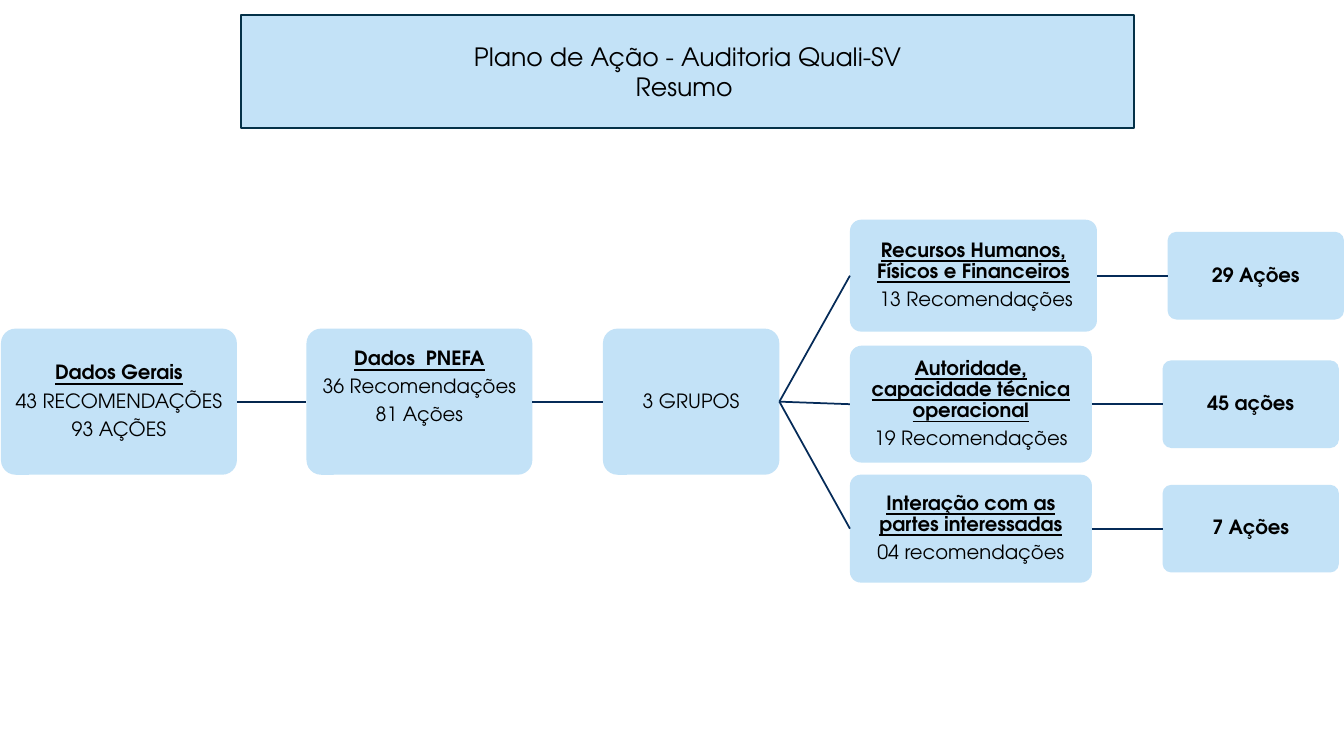
import pptx
import pptx.dml.color
import pptx.enum.shapes
import pptx.enum.text
import pptx.util
import lxml.etree
from pptx.oxml.ns import qn

Inches = pptx.util.Inches
Pt = pptx.util.Pt
RGBColor = pptx.dml.color.RGBColor
ALIGN = pptx.enum.text.PP_ALIGN
ANCHOR = pptx.enum.text.MSO_ANCHOR
SHAPE = pptx.enum.shapes.MSO_SHAPE
CONNECTOR = pptx.enum.shapes.MSO_CONNECTOR

FONT = "TeX Gyre Adventor"
LIGHT_BLUE = RGBColor(0xC3, 0xE2, 0xF7)
TITLE_BORDER = RGBColor(0x04, 0x31, 0x48)
FIRST_LINK = RGBColor(0x04, 0x26, 0x4E)
LINK = RGBColor(0x05, 0x2B, 0x58)
BLACK = RGBColor(0, 0, 0)

presentation = pptx.Presentation()
presentation.slide_width = Inches(13.33)
presentation.slide_height = Inches(7.5)
slide = presentation.slides.add_slide(presentation.slide_layouts[5])


def add_line(paragraph, text, size, bold=False, underline=False):
    paragraph.alignment = ALIGN.CENTER
    run = paragraph.add_run()
    run.text = text
    run.font.name = FONT
    run.font.size = Pt(size)
    run.font.color.rgb = BLACK
    run.font.bold = bold
    run.font.underline = underline


def add_box(left, top, width, height, heading, details):
    box = slide.shapes.add_shape(SHAPE.ROUNDED_RECTANGLE, Inches(left), Inches(top),
                                 Inches(width), Inches(height))
    box.adjustments[0] = 0.1
    box.shadow.inherit = False
    box.fill.solid()
    box.fill.fore_color.rgb = LIGHT_BLUE
    box.line.fill.background()
    frame = box.text_frame
    frame.word_wrap = True
    frame.vertical_anchor = ANCHOR.MIDDLE
    frame.margin_left = frame.margin_right = Inches(0.01)
    frame.margin_top = frame.margin_bottom = Inches(0.01)
    lines = [(heading, True)] if heading else []
    lines += [(detail, False) for detail in details]
    for index, (text, is_heading) in enumerate(lines):
        paragraph = frame.paragraphs[0] if index == 0 else frame.add_paragraph()
        paragraph.line_spacing = 0.9
        paragraph.space_after = Pt(4.9)
        add_line(paragraph, text, 14, is_heading, is_heading and bool(details))
    return box


title = slide.shapes.title
title.left, title.top = Inches(2.39), Inches(0.15)
title.width, title.height = Inches(8.86), Inches(1.12)
title.fill.solid()
title.fill.fore_color.rgb = LIGHT_BLUE
title.line.color.rgb = TITLE_BORDER
title.line.width = Pt(1.25)
title_frame = title.text_frame
title_frame.word_wrap = True
title_frame.auto_size = pptx.enum.text.MSO_AUTO_SIZE.NONE
title_frame.vertical_anchor = ANCHOR.MIDDLE
add_line(title_frame.paragraphs[0], "Plano de Ação - Auditoria Quali-SV", 18)
add_line(title_frame.add_paragraph(), "Resumo ", 18)

general = add_box(0.01, 3.26, 2.34, 1.45, "Dados Gerais", ["43 RECOMENDAÇÕES", "93 AÇÕES"])
program = add_box(3.04, 3.26, 2.24, 1.45, "Dados  PNEFA", ["36 Recomendações", "81 Ações"])
program.text_frame.margin_bottom = Inches(0.29)
groups = add_box(5.98, 3.26, 1.75, 1.45, None, ["3 GRUPOS"])
links = [(general, program, FIRST_LINK), (program, groups, LINK)]

branches = [
    (2.18, 2.45, 1.11, "Recursos Humanos, Físicos e Financeiros", " 13 Recomendações", "29 Ações"),
    (3.43, 2.4, 1.16, "Autoridade, capacidade técnica operacional", "19 Recomendações", "45 ações"),
    (4.71, 2.4, 1.07, "Interação com as partes interessadas", "04 recomendações", "7 Ações"),
]
for top, width, height, heading, detail, actions in branches:
    branch = add_box(8.43, top, width, height, heading, [detail])
    result = add_box(8.43 + width + 0.7, top + (height - 0.87) / 2, 1.75, 0.87, actions, [])
    links += [(groups, branch, LINK), (branch, result, LINK)]

for source, target, color in links:
    connector = slide.shapes.add_connector(CONNECTOR.STRAIGHT, 0, 0, 0, 0)
    connector.begin_connect(source, 3)
    connector.end_connect(target, 1)
    connector.line.color.rgb = color
    connector.line.width = Pt(1.25)
    lxml.etree.SubElement(connector._element.spPr, qn("a:effectLst"))

presentation.save("out.pptx")
